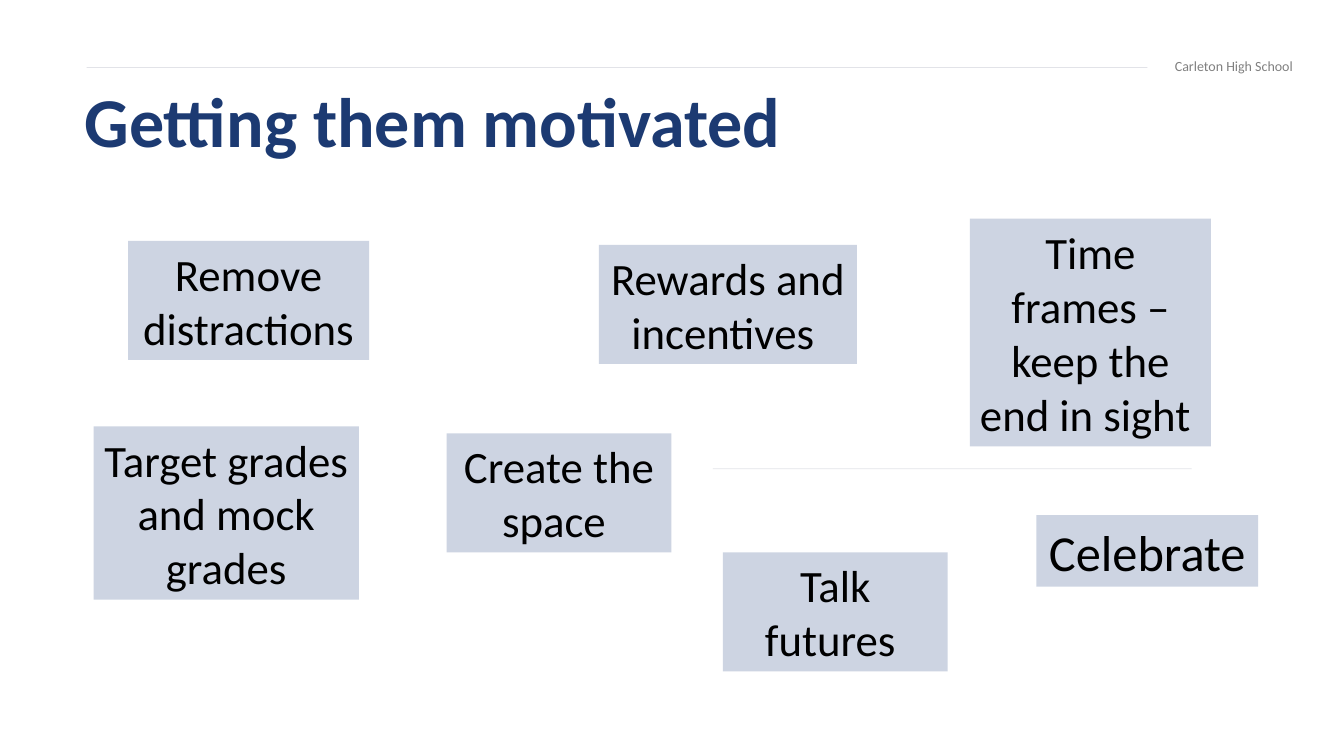
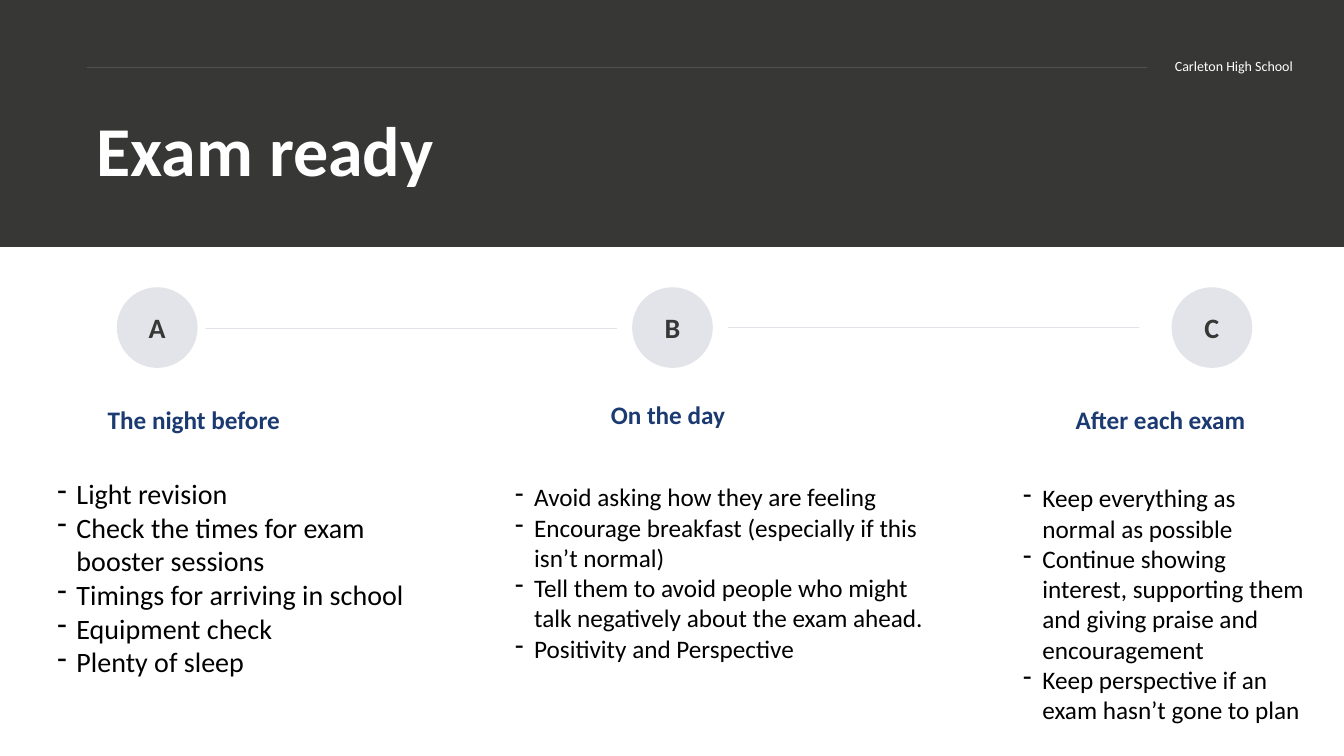
from lxml import etree
from pptx import Presentation
from pptx.dml.color import RGBColor
from pptx.enum.shapes import MSO_CONNECTOR, MSO_SHAPE
from pptx.enum.text import MSO_ANCHOR, PP_ALIGN
from pptx.oxml.ns import qn
from pptx.util import Inches, Pt

# Shared look
FONT = "Calibri"
NAVY = RGBColor(0x1C, 0x3A, 0x72)
INK = RGBColor(0x22, 0x2A, 0x53)
DARK = RGBColor(0x37, 0x37, 0x36)
GREY = RGBColor(0x80, 0x80, 0x80)
PALE = RGBColor(0xCD, 0xD4, 0xE2)
MIST = RGBColor(0xE3, 0xE4, 0xEA)
BLACK = RGBColor(0, 0, 0)
WHITE = RGBColor(0xFF, 0xFF, 0xFF)
DOT = 0.8   # circle diameter
GAP = 0.15  # space between a circle and its line

# Cards: text, left, top, width, height, size
CARDS = [
    ("Remove distractions", 1.27, 2.39, 2.39, 1.18, 32),
    ("Create the space ", 4.43, 4.3, 2.23, 1.18, 32),
    ("Rewards and incentives ", 5.94, 2.43, 2.56, 1.18, 32),
    ("Talk futures ", 7.17, 5.48, 2.23, 1.18, 32),
    ("Time frames – keep the end in sight ", 9.62, 2.17, 2.39, 2.26, 32),
    ("Target grades and mock grades", 0.93, 4.23, 2.63, 1.72, 32),
    ("Celebrate", 10.28, 5.11, 2.2, 0.71, 36),
]

# Stages: letter, circle left, heading, heading spot, list box, size, points
STAGES = [
    ("A", 1.16, "The night before", (0.97, 3.96), (0.47, 4.68, 3.91, 2.73), 20,
     ["Light revision",
      "Check the times for exam booster sessions",
      "Timings for arriving in school",
      "Equipment check",
      "Plenty of sleep"]),
    ("B", 6.27, "On the day", (5.96, 3.91), (5.01, 4.73, 4.4, 2.22), 18,
     ["Avoid asking how they are feeling",
      "Encourage breakfast (especially if this isn’t normal)",
      "Tell them to avoid people who might talk negatively about the exam ahead.",
      "Positivity and Perspective"]),
    ("C", 11.62, "After each exam", (10.57, 3.96), (10.05, 4.74, 3.02, 2.52), 18,
     ["Keep everything as normal as possible",
      "Continue showing interest, supporting them and giving praise and encouragement",
      "Keep perspective if an exam hasn’t gone to plan"]),
]


def dash(para):
    """Hang a dash in front of a paragraph."""
    props = para._p.get_or_add_pPr()
    props.set("marL", str(Inches(0.19)))
    props.set("indent", str(-Inches(0.19)))
    etree.SubElement(props, qn("a:buChar")).set("char", "-")


def write(frame, text, size=18, color=BLACK, bold=False,
          align=PP_ALIGN.LEFT, dashes=False, pitch=None):
    """Fill a text frame with one line or a list of lines."""
    frame.word_wrap = True
    lines = [text] if isinstance(text, str) else text
    for i, line in enumerate(lines):
        para = frame.add_paragraph() if i else frame.paragraphs[0]
        if dashes:
            dash(para)
        para.alignment = align
        if pitch:
            para.line_spacing = pitch
        run = para.add_run()
        run.text = line
        font = run.font
        font.name, font.size, font.bold = FONT, Pt(size), bold
        font.color.rgb = color


def label(slide, box, text, **style):
    area = slide.shapes.add_textbox(*map(Inches, box))
    write(area.text_frame, text, **style)


def block(slide, kind, box, fill):
    shape = slide.shapes.add_shape(kind, *map(Inches, box))
    shape.shadow.inherit = False
    shape.fill.solid()
    shape.fill.fore_color.rgb = fill
    shape.line.fill.background()
    return shape


def rule(slide, left, right, top, color=INK):
    """Draw a faint level line."""
    line = slide.shapes.add_connector(
        MSO_CONNECTOR.STRAIGHT, Inches(left), Inches(top), Inches(right), Inches(top))
    line.line.width = Pt(0.5)
    line.line.color.rgb = color
    props = line._element.spPr
    tint = props.find(".//" + qn("a:srgbClr"))
    etree.SubElement(tint, qn("a:alpha")).set("val", "12000")
    etree.SubElement(props, qn("a:effectLst"))


def header(slide, title, left, top, color, line, note):
    rule(slide, 0.86, 11.38, 0.67, line)
    label(slide, (10.71, 0.54, 2.21, 0.29), "Carleton High School",
          size=10, color=note, align=PP_ALIGN.RIGHT, pitch=0.9)
    label(slide, (left, top, 9.83, 0.94), title, size=50, color=color, bold=True)


def card(slide, text, left, top, width, height, size):
    shape = block(slide, MSO_SHAPE.RECTANGLE, (left, top, width, height), PALE)
    write(shape.text_frame, text, size=size, align=PP_ALIGN.CENTER)


def badge(slide, letter, left, top):
    shape = block(slide, MSO_SHAPE.OVAL, (left, top, DOT, DOT), MIST)
    frame = shape.text_frame
    frame.margin_left = frame.margin_right = 0
    frame.margin_top = frame.margin_bottom = 0
    frame.vertical_anchor = MSO_ANCHOR.MIDDLE
    write(frame, letter, size=20, color=DARK, bold=True, align=PP_ALIGN.CENTER)


def stage(slide, letter, left, head, spot, box, size, points):
    badge(slide, letter, left, 2.85)
    label(slide, (*spot, 2.5, 0.4), head, color=NAVY, bold=True)
    label(slide, box, points, size=size, dashes=True)


def drive(slide):
    """Slide of scattered cards."""
    header(slide, "Getting them motivated", 0.74, 0.72, NAVY, INK, GREY)
    rule(slide, 7.07, 11.82, 4.65)
    for item in CARDS:
        card(slide, *item)


def ready(slide):
    """Slide of three stages under a dark band."""
    block(slide, MSO_SHAPE.RECTANGLE, (0, 0, 13.33, 2.45), DARK)
    header(slide, "Exam ready", 0.86, 1.01, WHITE, WHITE, WHITE)
    for item in STAGES:
        stage(slide, *item)
    # Each line runs 4.08 wide, beside the middle circle
    mid = STAGES[1][1]
    rule(slide, mid - GAP - 4.08, mid - GAP, 3.26)
    rule(slide, mid + DOT + GAP, mid + DOT + GAP + 4.08, 3.25)


def main():
    deck = Presentation()
    deck.slide_width, deck.slide_height = Inches(13.33), Inches(7.5)
    for build in (drive, ready):
        build(deck.slides.add_slide(deck.slide_layouts[6]))
    deck.save("out.pptx")


if __name__ == "__main__":
    main()
